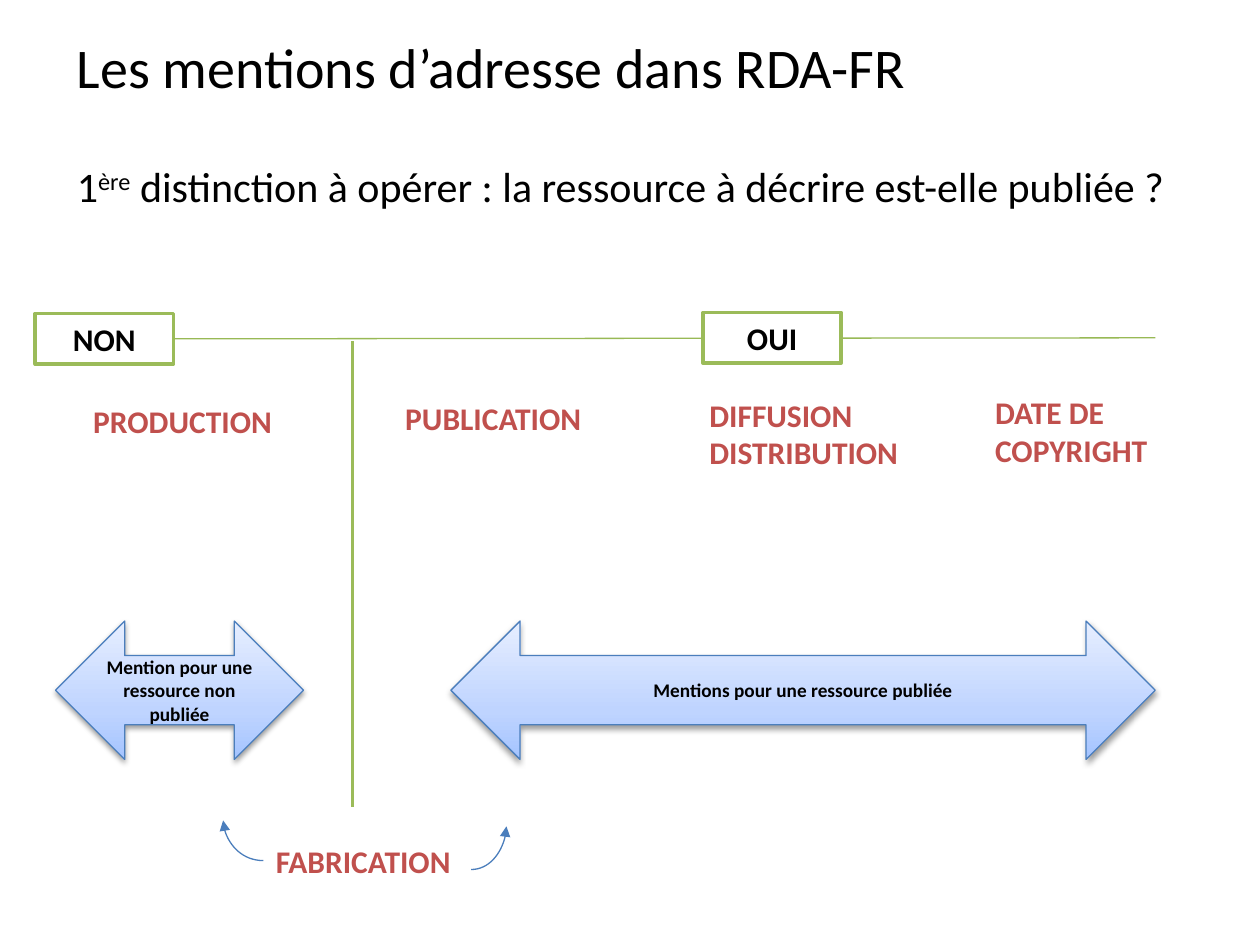
import copy

import pptx
import pptx.dml.color
import pptx.enum.shapes
import pptx.enum.text
import pptx.oxml
import pptx.oxml.ns
import pptx.util

Cm = pptx.util.Cm
SHAPES = pptx.enum.shapes.MSO_SHAPE
CONNECTORS = pptx.enum.shapes.MSO_CONNECTOR
ANCHORS = pptx.enum.text.MSO_ANCHOR
CENTER = pptx.enum.text.PP_ALIGN.CENTER

BLACK, WHITE, RED = "000000", "FFFFFF", "C0504D"
GREEN, PALE_GREEN, BLUE = "9BBB59", "98B955", "4B7EBC"
GRADIENT = [(0, "A4C4FF"), (0.35, "BFD4FF"), (1, "E6EEFF")]

TITLE = {"size": pptx.util.Pt(32)}
QUESTION = {"size": pptx.util.Pt(24)}
LABEL = {"size": pptx.util.Pt(18), "bold": True}
CAPTION = {"size": pptx.util.Pt(11), "bold": True}
LABEL_WIDTH, LINE_HEIGHT = 4.6, 1.02


def color(code):
    """Turn a hex string into a colour."""
    return pptx.dml.color.RGBColor.from_string(code)


def draw_xml(text):
    """Parse one DrawingML element."""
    return pptx.oxml.parse_xml(text.replace("/>", f" {pptx.oxml.ns.nsdecls('a')}/>", 1)
                               if text.endswith("/>") and text.count("<") == 1
                               else text.replace(">", f" {pptx.oxml.ns.nsdecls('a')}>", 1))


def add_span(para, text, style, code):
    """Add a run whose font follows the style."""
    span = para.add_run()
    span.text = text
    for name, value in {"name": "Calibri", **style}.items():
        setattr(span.font, name, value)
    span.font.color.rgb = color(code)
    return span


def write(box, lines, style, code, align=None, anchor=ANCHORS.TOP, wrap=True):
    """Write one paragraph for each line into the box."""
    frame = box.text_frame
    frame.word_wrap = wrap
    frame.vertical_anchor = anchor
    for index, line in enumerate(lines):
        para = frame.add_paragraph() if index else frame.paragraphs[0]
        para.alignment = align
        add_span(para, line, style, code)


def add_text(page, left, top, width, height, *args, **options):
    """Add a text box and write in it."""
    box = page.shapes.add_textbox(Cm(left), Cm(top), Cm(width), Cm(height))
    write(box, *args, **options)
    return box


def add_label(page, left, top, *lines):
    """Add a bold red label."""
    height = LINE_HEIGHT + 0.78 * (len(lines) - 1)
    add_text(page, left, top, LABEL_WIDTH, height, lines, LABEL, RED)


def add_line(page, start, end, code, width, kind=CONNECTORS.STRAIGHT):
    """Add a connector without a shadow."""
    line = page.shapes.add_connector(kind, *map(Cm, start + end))
    line.line.color.rgb = color(code)
    line.line.width = pptx.util.Pt(width)
    line._element.spPr.append(draw_xml("<a:effectLst/>"))
    return line


def add_curve(page, start, end):
    """Add a quarter curve with an arrowhead at its end."""
    curve = add_line(page, start, end, BLUE, 0.75, CONNECTORS.CURVE)
    curve._element.spPr.prstGeom.set("prst", "curvedConnector2")
    curve.line._get_or_add_ln().append(draw_xml('<a:tailEnd type="triangle"/>'))


def add_answer(page, left, top, text):
    """Add a framed answer."""
    box = page.shapes.add_shape(SHAPES.RECTANGLE, Cm(left), Cm(top), Cm(2.79), Cm(LINE_HEIGHT))
    box.shadow.inherit = False
    box.fill.solid()
    box.fill.fore_color.rgb = color(WHITE)
    box.line.color.rgb = color(GREEN)
    box.line.width = pptx.util.Pt(2)
    write(box, [text], LABEL, BLACK, CENTER)
    return box


def add_range(page, left, top, width, text):
    """Add a shaded double arrow with its caption."""
    arrow = page.shapes.add_shape(SHAPES.LEFT_RIGHT_ARROW, Cm(left), Cm(top), Cm(width), Cm(2.79))
    arrow.fill.gradient()
    arrow.fill.gradient_angle = 90
    stops = arrow._element.spPr.find(".//" + pptx.oxml.ns.qn("a:gsLst"))
    stops.append(copy.deepcopy(stops[0]))
    for stop, (position, code) in zip(arrow.fill.gradient_stops, GRADIENT):
        stop.position = position
        stop.color.rgb = color(code)
    arrow.line.color.rgb = color(BLUE)
    arrow.line.width = pptx.util.Pt(0.75)
    arrow.shadow.inherit = False
    effects = arrow._element.spPr.find(pptx.oxml.ns.qn("a:effectLst"))
    effects.append(draw_xml(
        '<a:outerShdw blurRad="40000" dist="20000" dir="5400000" rotWithShape="0">'
        '<a:srgbClr val="000000"><a:alpha val="38000"/></a:srgbClr></a:outerShdw>'))
    write(arrow, [text], CAPTION, BLACK, CENTER, ANCHORS.MIDDLE)


def build_header(page, left, top):
    """Place the title and the question below it."""
    add_text(page, left, top, 22.86, 1.8, ["Les mentions d’adresse dans RDA-FR"], TITLE, BLACK)
    question = add_text(page, left, top + 2.59, 22.99, 1.27, ["1"], QUESTION, BLACK, wrap=False)
    para = question.text_frame.paragraphs[0]
    ordinal = add_span(para, "ère", QUESTION, BLACK)
    ordinal._r.get_or_add_rPr().set("baseline", "30000")
    add_span(para, " distinction à opérer : la ressource à décrire est-elle publiée ?", QUESTION, BLACK)


def build_answers(page, left, top):
    """Place the two answers on their axis, and the divider."""
    no_box = add_answer(page, left, top, "NON")
    axis = add_line(page, (left + 2.79, top + 0.51), (left + 22.58, top + 0.49), PALE_GREEN, 0.75)
    axis.begin_connect(no_box, 3)
    add_answer(page, left + 13.46, top - 0.02, "OUI")
    add_line(page, (left + 6.4, top + 0.56), (left + 6.4, top + 9.94), GREEN, 1.5)


def build_statements(page, left, top):
    """Place the labels of the statements."""
    add_label(page, left, top + 0.18, "PRODUCTION")
    add_label(page, left + 6.29, top + 0.12, "PUBLICATION")
    add_label(page, left + 12.42, top + 0.05, "DIFFUSION", "DISTRIBUTION")
    add_label(page, left + 18.18, top, "DATE DE COPYRIGHT")


def build_ranges(page, left, top):
    """Place the two double arrows side by side."""
    add_range(page, left, top, 5, "Mention pour une ressource non publiée")
    add_range(page, left + 7.97, top, 14.2, "Mentions pour une ressource publiée")


def build_manufacture(page, left, top):
    """Place the manufacture label and its two curves."""
    add_label(page, left, top, "FABRICATION")
    add_curve(page, (left, top + 0.51), (left - 0.81, top - 0.3))
    add_curve(page, (left + 4.19, top + 0.69), (left + 4.9, top - 0.18))


def main():
    """Build the deck and save it."""
    deck = pptx.Presentation()
    deck.slide_width, deck.slide_height = Cm(25.4), Cm(19.05)
    page = deck.slides.add_slide(deck.slide_layouts[6])
    build_header(page, 1.3, 0.53)
    build_answers(page, 0.71, 6.32)
    build_statements(page, 1.63, 7.8)
    build_ranges(page, 1.12, 12.52)
    build_manufacture(page, 5.31, 16.84)
    deck.save("out.pptx")


if __name__ == "__main__":
    main()
